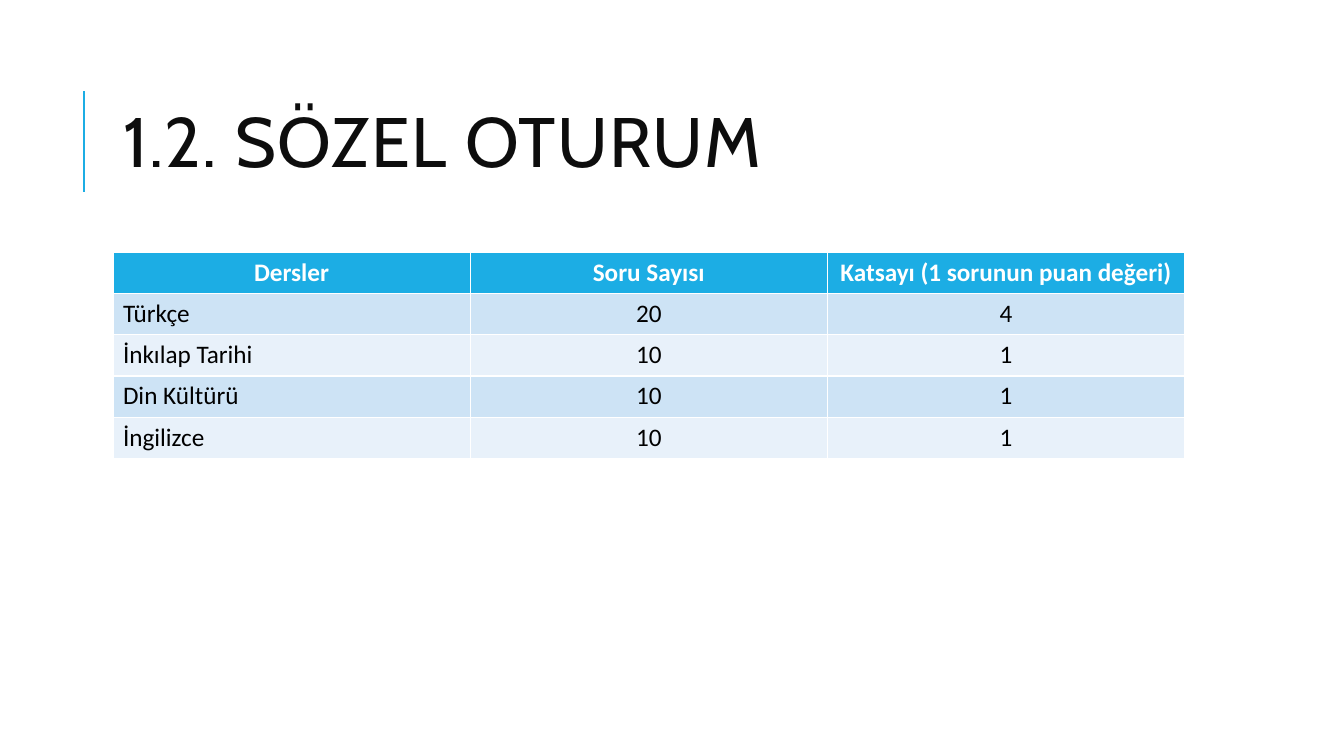
from pptx import Presentation, util as u
from pptx.dml.color import RGBColor
from pptx.enum import shapes, text
from lxml import etree

DRAWING_NS = "http://schemas.openxmlformats.org/drawingml/2006/main"
ACCENT, WHITE, BLACK, INK = "1CADE4", "FFFFFF", "000000", "0D0D0D"
BANDS = ["CDE3F5", "E8F1FA"]
LEFT, WIDTH = u.Inches(1.12), u.Inches(10.63)
ROW_HEIGHT = u.Inches(0.41)

LESSONS = [
    ["Dersler", "Soru Sayısı", "Katsayı (1 sorunun puan değeri)"],
    ["Türkçe", "20", "4"],
    ["İnkılap Tarihi", "10", "1"],
    ["Din Kültürü", "10", "1"],
    ["İngilizce", "10", "1"],
]


def paint(color_format, hex_color):
    color_format.rgb = RGBColor.from_string(hex_color)


def style_paragraph(paragraph, font_name, size, color, align, bold=False):
    paragraph.alignment = align
    font = paragraph.font
    font.name, font.size, font.bold = font_name, u.Pt(size), bold
    paint(font.color, color)


def add_accent_rule(slide):
    x = u.Inches(0.83)
    rule = slide.shapes.add_connector(
        shapes.MSO_CONNECTOR.STRAIGHT, x, u.Inches(1.9), x, u.Inches(0.9))
    paint(rule.line.color, ACCENT)
    rule.line.width = u.Pt(1.5)
    etree.SubElement(rule.element.spPr, f"{{{DRAWING_NS}}}effectLst")


def set_title(slide, wording):
    title = slide.shapes.title
    title.left, title.top = LEFT, u.Inches(0.64)
    title.width, title.height = WIDTH, u.Inches(1.64)
    frame = title.text_frame
    frame.text = wording
    frame.auto_size = text.MSO_AUTO_SIZE.NONE
    frame.vertical_anchor = text.MSO_ANCHOR.MIDDLE
    heading = frame.paragraphs[0]
    style_paragraph(heading, "Cabin", 50, INK, text.PP_ALIGN.LEFT)
    heading.line_spacing = 0.8
    # Letter spacing of one point
    heading.runs[0].font._element.set("spc", "100")


def fill_cell(cell, wording, row, column):
    is_header = row == 0
    cell.fill.solid()
    paint(cell.fill.fore_color, ACCENT if is_header else BANDS[(row - 1) % 2])
    cell.text = wording
    centred = is_header or column > 0
    style_paragraph(
        cell.text_frame.paragraphs[0], "Calibri", 18,
        WHITE if is_header else BLACK,
        text.PP_ALIGN.CENTER if centred else text.PP_ALIGN.LEFT,
        bold=is_header)


def add_lesson_table(slide, lessons):
    # The default table style supplies the white cell borders
    table = slide.shapes.add_table(
        len(lessons), len(lessons[0]), LEFT, u.Inches(2.5),
        WIDTH, ROW_HEIGHT * len(lessons)).table
    for row, lesson in enumerate(lessons):
        for column, wording in enumerate(lesson):
            fill_cell(table.cell(row, column), wording, row, column)


def main():
    deck = Presentation()
    deck.slide_width, deck.slide_height = u.Inches(13.33), u.Inches(7.5)
    slide = deck.slides.add_slide(deck.slide_layouts.get_by_name("Title Only"))
    slide.background.fill.solid()
    paint(slide.background.fill.fore_color, WHITE)

    # Heading
    add_accent_rule(slide)
    set_title(slide, "1.2. SÖZEL OTURUM")

    # Lessons with question counts and weights
    add_lesson_table(slide, LESSONS)
    deck.save("out.pptx")


if __name__ == "__main__":
    main()
